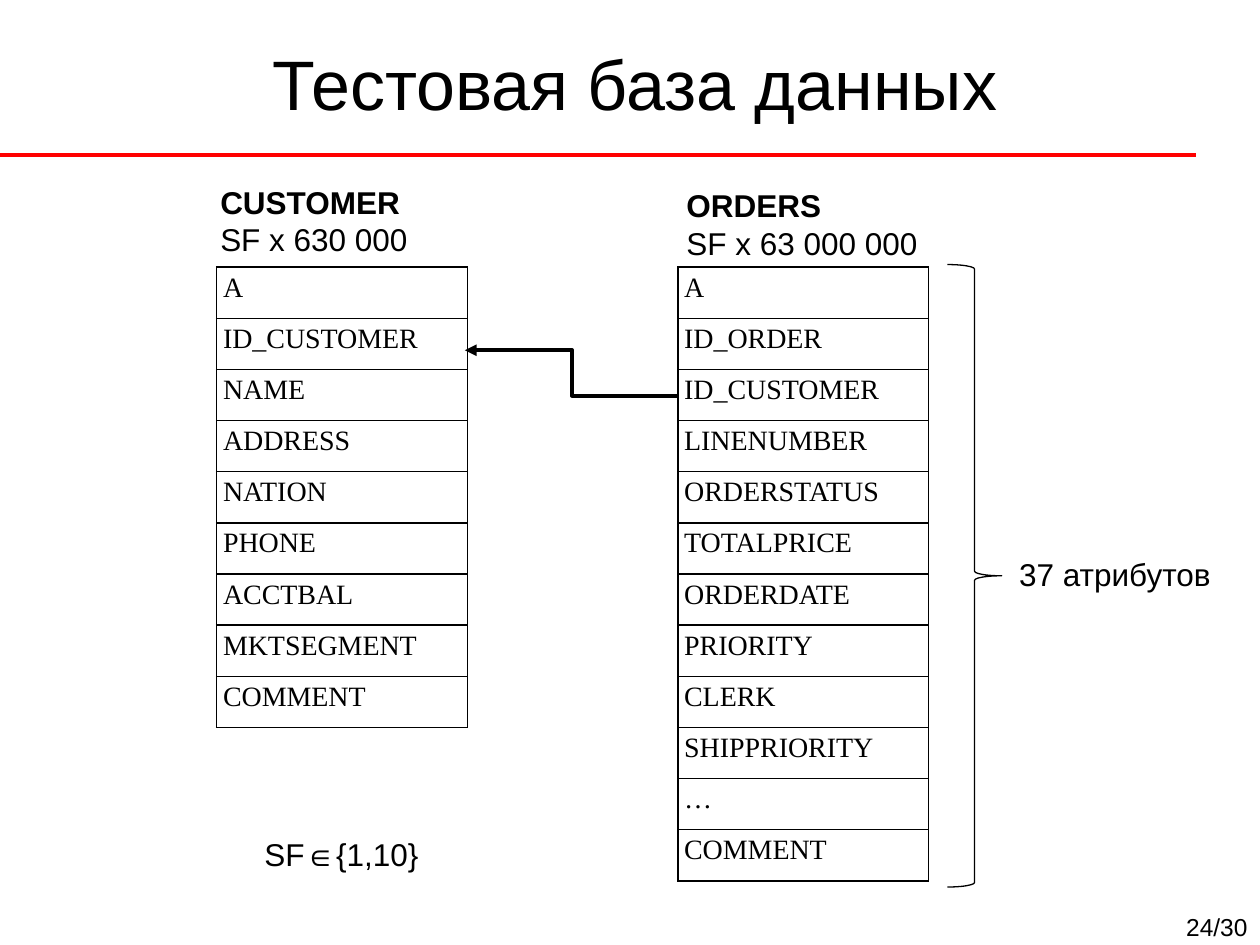
from dataclasses import dataclass

from lxml import etree
from pptx import Presentation
from pptx import oxml
from pptx import util as u
from pptx.dml.color import RGBColor
from pptx.enum import shapes, text
from pptx.oxml import ns

BLACK = RGBColor(0, 0, 0)
RED = RGBColor(255, 0, 0)
ROW_HEIGHT = 0.406
COLUMN_WIDTH = 1.99
TABLE_TOP = 2.12


@dataclass(frozen=True)
class Label:
    lines: tuple[str, ...]
    left: float
    top: float
    width: float
    height: float
    size: int = 18
    align: text.PP_ALIGN = text.PP_ALIGN.LEFT
    anchor: text.MSO_ANCHOR = text.MSO_ANCHOR.TOP
    bold_first: bool = False


@dataclass(frozen=True)
class Relation:
    left: float
    attributes: tuple[str, ...]


LABELS = (
    Label(("Тестовая база данных",), 0.51, 0.08, 9.06, 1.15, 40,
          text.PP_ALIGN.CENTER, text.MSO_ANCHOR.MIDDLE),
    Label(("24/30",), 9.25, 7.19, 0.75, 0.31, 14, text.PP_ALIGN.RIGHT),
    Label(("CUSTOMER", "SF х 630 000"), 1.65, 1.4, 2.13, 0.71, bold_first=True),
    Label(("ORDERS", "SF х 63 000 000"), 5.35, 1.43, 2.13, 0.71, bold_first=True),
    Label(("37 атрибутов",), 7.99, 4.36, 1.73, 0.4),
    Label(("SF∈{1,10}",), 2, 6.58, 1.43, 0.4),
)

RELATIONS = (
    Relation(1.72, ("A", "ID_CUSTOMER", "NAME", "ADDRESS", "NATION", "PHONE",
                    "ACCTBAL", "MKTSEGMENT", "COMMENT")),
    Relation(5.38, ("A", "ID_ORDER", "ID_CUSTOMER", "LINENUMBER", "ORDERSTATUS",
                    "TOTALPRICE", "ORDERDATE", "PRIORITY", "CLERK",
                    "SHIPPRIORITY", "…", "COMMENT")),
)


def add_run(paragraph, content: str, size: int, font_name: str, bold: bool = False) -> None:
    run = paragraph.add_run()
    run.text = content
    run.font.size = u.Pt(size)
    run.font.name = font_name
    run.font.bold = bold
    run.font.color.rgb = BLACK


def add_label(slide, label: Label) -> None:
    shape = slide.shapes.add_textbox(u.Inches(label.left), u.Inches(label.top),
                                     u.Inches(label.width), u.Inches(label.height))
    frame = shape.text_frame
    frame.word_wrap = True
    frame.vertical_anchor = label.anchor
    for index, line in enumerate(label.lines):
        paragraph = frame.add_paragraph() if index else frame.paragraphs[0]
        paragraph.alignment = label.align
        add_run(paragraph, line, label.size, "Arial", label.bold_first and index == 0)


def add_borders(cell) -> None:
    properties = cell._tc.get_or_add_tcPr()
    for index, side in enumerate(("lnL", "lnR", "lnT", "lnB")):
        border = oxml.parse_xml(
            f'<a:{side} {ns.nsdecls("a")} w="{u.Pt(1)}"><a:solidFill>'
            f'<a:srgbClr val="{BLACK}"/></a:solidFill></a:{side}>')
        properties.insert(index, border)


def add_relation(slide, relation: Relation) -> None:
    count = len(relation.attributes)
    table = slide.shapes.add_table(
        count, 1, u.Inches(relation.left), u.Inches(TABLE_TOP),
        u.Inches(COLUMN_WIDTH), u.Inches(ROW_HEIGHT * count)).table
    table.first_row = table.horz_banding = False
    for index, attribute in enumerate(relation.attributes):
        table.rows[index].height = u.Inches(ROW_HEIGHT)
        cell = table.cell(index, 0)
        cell.fill.background()
        cell.margin_left = cell.margin_right = u.Inches(0.05)
        cell.margin_top = cell.margin_bottom = u.Inches(0.04)
        add_borders(cell)
        paragraph = cell.text_frame.paragraphs[0]
        paragraph.alignment = text.PP_ALIGN.JUSTIFY
        add_run(paragraph, attribute, 16, "Times New Roman")


def add_line(slide, kind: shapes.MSO_CONNECTOR, start: tuple[float, float],
             end: tuple[float, float], color: RGBColor):
    connector = slide.shapes.add_connector(
        kind, *(u.Inches(value) for value in (*start, *end)))
    connector.line.color.rgb = color
    connector.line.width = u.Pt(2.25)
    etree.SubElement(connector._element.spPr, ns.qn("a:effectLst"))
    return connector


def add_brace(slide) -> None:
    brace = slide.shapes.add_shape(shapes.MSO_SHAPE.RIGHT_BRACE, u.Inches(7.52),
                                   u.Inches(2.1), u.Inches(0.43), u.Inches(4.94))
    brace.shadow.inherit = False
    brace.fill.background()
    brace.line.color.rgb = BLACK
    brace.line.width = u.Pt(0.75)


def main() -> None:
    presentation = Presentation()
    presentation.slide_width = u.Inches(10)
    presentation.slide_height = u.Inches(7.5)
    slide = presentation.slides.add_slide(presentation.slide_layouts[6])

    add_line(slide, shapes.MSO_CONNECTOR.STRAIGHT, (0, 1.23), (9.49, 1.23), RED)
    for relation in RELATIONS:
        add_relation(slide, relation)
    add_brace(slide)
    foreign_key = add_line(slide, shapes.MSO_CONNECTOR.ELBOW, (3.69, 2.78), (5.39, 3.14), BLACK)
    etree.SubElement(foreign_key.line._get_or_add_ln(), ns.qn("a:headEnd"), type="triangle")
    for label in LABELS:
        add_label(slide, label)

    presentation.save("out.pptx")


if __name__ == "__main__":
    main()
